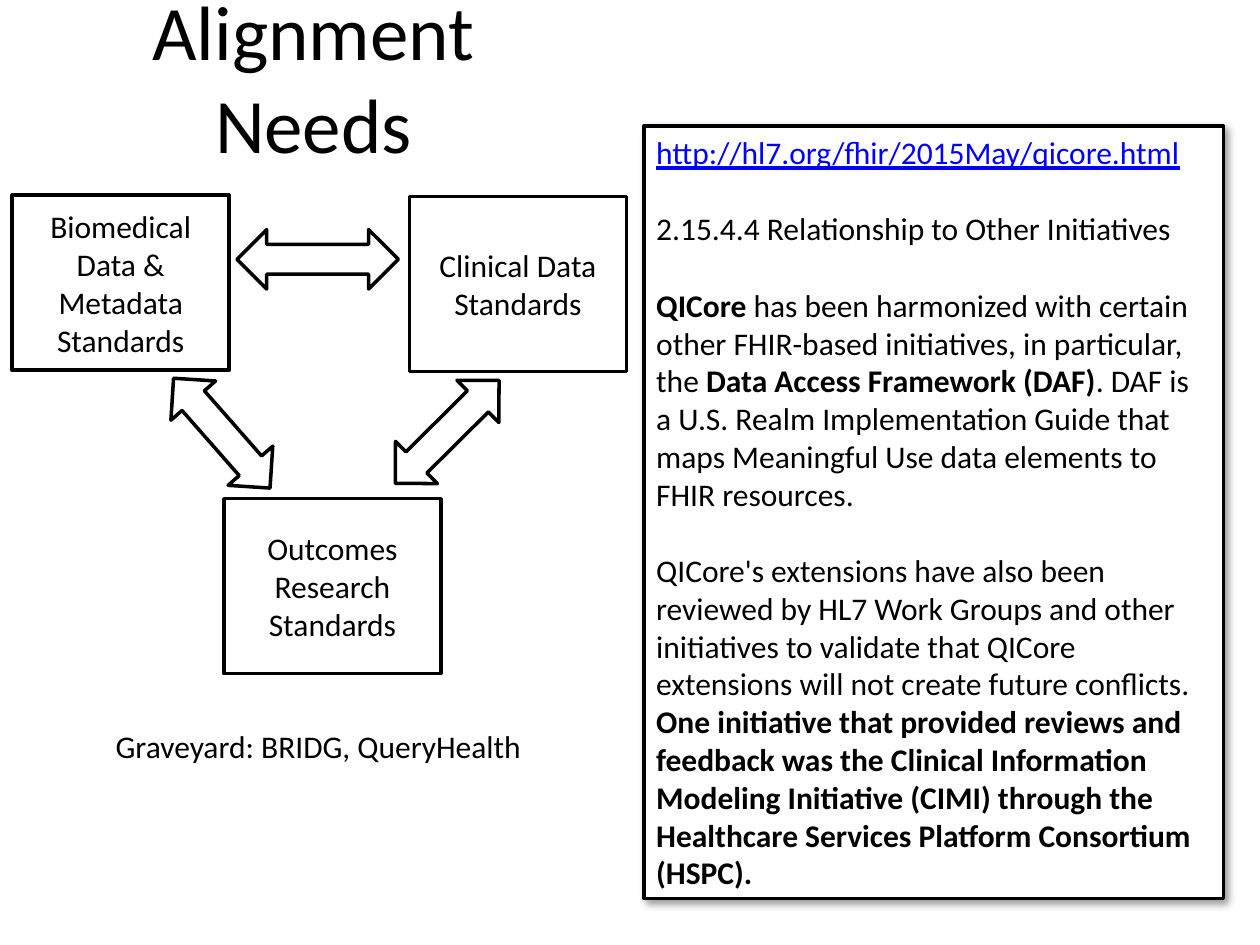
"""Builds the Alignment Needs slide: a triangle of standards beside a text panel."""
from lxml import etree
from pptx import Presentation
from pptx.dml.color import RGBColor
from pptx.enum.shapes import MSO_SHAPE
from pptx.enum.text import MSO_ANCHOR, PP_ALIGN
from pptx.oxml.ns import qn
from pptx.util import Pt

RECTANGLE = MSO_SHAPE.RECTANGLE
DOUBLE_ARROW = MSO_SHAPE.LEFT_RIGHT_ARROW
MIDDLE = MSO_ANCHOR.MIDDLE
CENTER = PP_ALIGN.CENTER
LEFT = PP_ALIGN.LEFT
BLACK, WHITE, BLUE = "000000", "FFFFFF", "0000FF"


def add_run(paragraph, text, size=18, bold=False, color=BLACK):
    run = paragraph.add_run()
    run.text = text
    run.font.name = "Calibri"
    run.font.size = Pt(size)
    run.font.bold = bold
    run.font.color.rgb = RGBColor.from_string(color)
    return run


def add_outlined(kind, left, top, width, height):
    shape = slide.shapes.add_shape(kind, Pt(left), Pt(top), Pt(width), Pt(height))
    shape.shadow.inherit = False
    shape.fill.solid()
    shape.fill.fore_color.rgb = RGBColor.from_string(WHITE)
    shape.line.color.rgb = RGBColor.from_string(BLACK)
    shape.line.width = Pt(2)
    shape.text_frame.word_wrap = True
    shape.text_frame.vertical_anchor = MIDDLE
    return shape


presentation = Presentation()
presentation.slide_width, presentation.slide_height = Pt(720), Pt(540)
slide = presentation.slides.add_slide(presentation.slide_layouts[5])

title = slide.shapes.title
title.left, title.top, title.width, title.height = Pt(18.7), Pt(11.5), Pt(321), Pt(64)
title.text_frame.word_wrap = False
title.text_frame.vertical_anchor = MIDDLE
title.text_frame.paragraphs[0].alignment = CENTER
add_run(title.text_frame.paragraphs[0], "Alignment Needs", size=44)

standards = [
    ("Biomedical Data & Metadata Standards", 7, 111.6),
    ("Clinical Data Standards", 234, 112.3),
    ("Outcomes Research Standards", 128, 285),
]
for name, left, top in standards:
    box = add_outlined(RECTANGLE, left, top, 124, 100)
    paragraph = box.text_frame.paragraphs[0]
    paragraph.alignment = CENTER
    add_run(paragraph, name)

arrows = [
    (85, 230.5, 83.5, 228.7),
    (213.8, 229.8, 83.5, 315.2),
    (135.4, 131.2, 92.2, 0),
]
for left, top, width, rotation in arrows:
    arrow = add_outlined(DOUBLE_ARROW, left, top, width, 34)
    arrow.rotation = rotation

panel = add_outlined(RECTANGLE, 367.9, 72, 331.2, 441.4)
effects = panel._element.spPr.find(qn("a:effectLst"))
shadow = etree.SubElement(effects, qn("a:outerShdw"), blurRad=str(Pt(4)),
                          dist=str(Pt(3)), dir=str(45 * 60000), algn="tl", rotWithShape="0")
shadow_color = etree.SubElement(shadow, qn("a:srgbClr"), val=BLACK)
etree.SubElement(shadow_color, qn("a:alpha"), val="40000")

panel_paragraphs = [
    [("http://hl7.org/fhir/2015May/qicore.html", False)],
    [("2.15.4.4 Relationship to Other Initiatives", False)],
    [
        ("QICore", True),
        (" has been harmonized with certain other FHIR-based initiatives, in particular, the ", False),
        ("Data Access Framework (DAF)", True),
        (". DAF is a U.S. Realm Implementation Guide that maps Meaningful Use data elements "
         "to FHIR resources.", False),
    ],
    [
        ("QICore's extensions have also been reviewed by HL7 Work Groups and other initiatives "
         "to validate that QICore extensions will not create future conflicts. ", False),
        ("One initiative that provided reviews and feedback was the Clinical Information Modeling "
         "Initiative (CIMI) through the Healthcare Services Platform Consortium (HSPC).", True),
    ],
]
for index, runs in enumerate(panel_paragraphs):
    frame = panel.text_frame
    paragraph = frame.add_paragraph() if index else frame.paragraphs[0]
    paragraph.alignment = LEFT
    paragraph.space_before = Pt(22 if index else 0)
    for text, bold in runs:
        run = add_run(paragraph, text, bold=bold, color=BLACK if index else BLUE)
        run.font.underline = index == 0

graveyard = slide.shapes.add_textbox(Pt(59), Pt(412), Pt(252), Pt(29))
graveyard.text_frame.word_wrap = True
add_run(graveyard.text_frame.paragraphs[0], "Graveyard: BRIDG, QueryHealth")

presentation.save("out.pptx")
